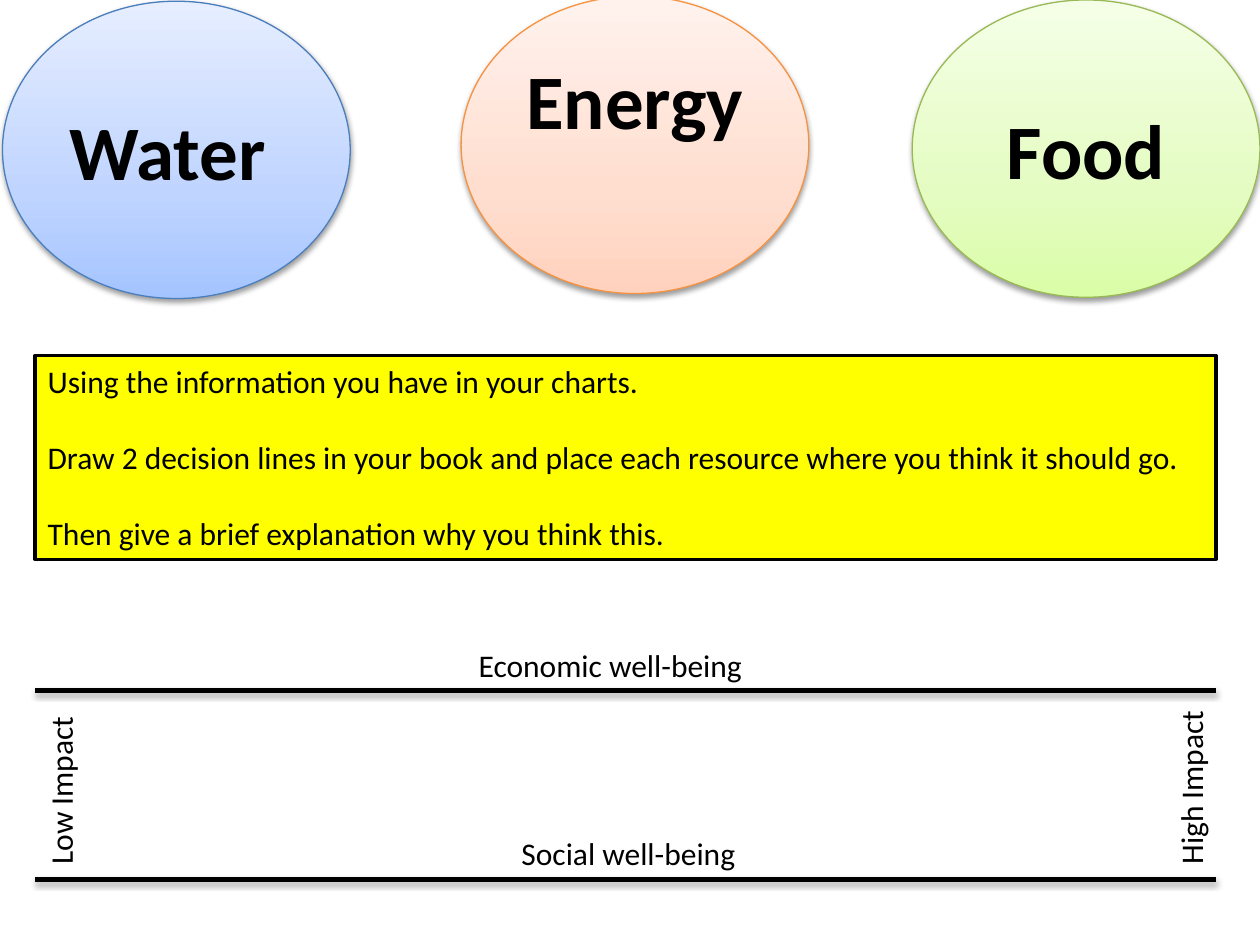
from copy import deepcopy

from lxml.etree import SubElement
from pptx import Presentation
from pptx.dml.color import RGBColor
from pptx.enum.shapes import MSO_CONNECTOR as Conn, MSO_SHAPE as Shape
from pptx.enum.text import MSO_ANCHOR as Anchor, PP_ALIGN as Align
from pptx.oxml.ns import qn
from pptx.util import Inches, Pt

BLACK = "000000"
LEFT, WIDE = 0.28, 9.37
OVALS = [
    ("Water ", 0.02, 0.01, ("A4C4FF", "BFD4FF", "E6EEFF"), "4B7EBC"),
    ("Energy  ", 3.66, -0.03, ("FFD2BD", "FFDED0", "FFF2ED"), "F69240"),
    ("Food", 7.24, 0, ("DAFDA7", "E4FCC2", "F5FFE7"), "98B955"),
]
TASK = [
    "Using the information you have in your charts.",
    "Draw 2 decision lines in your book and place each resource where you think it should go.",
    "Then give a brief explanation why you think this.",
]
LABELS = [
    ("Low Impact", -0.27, 6.01, 1.5, 270),
    ("High Impact", 8.7, 6.01, 1.5, 270),
    ("Economic well-being", 3.7, 5.08, 2.52, 0),
    ("Social well-being", 4.04, 6.57, 2.01, 0),
]


def rgb(code):
    return RGBColor.from_string(code)


def box(*sizes):
    return [Inches(size) for size in sizes]


def style(para, size, bold=False):
    for run in para.runs:
        font = run.font
        font.name, font.size, font.bold = "Calibri", Pt(size), bold
        font.color.rgb = rgb(BLACK)


def outline(shape, color, width):
    shape.line.color.rgb = rgb(color)
    shape.line.width = Pt(width)


def add_shadow(shape, dist, alpha):
    """Put a soft shadow straight below a shape whose line is already set."""
    props = shape._element.spPr
    effects = SubElement(props, qn("a:effectLst"))
    shadow = SubElement(effects, qn("a:outerShdw"), blurRad=str(Pt(3.1)),
                        dist=str(Pt(dist)), dir="5400000", rotWithShape="0")
    tone = SubElement(shadow, qn("a:srgbClr"), val=BLACK)
    SubElement(tone, qn("a:alpha"), val=str(alpha * 1000))


def fade(shape, colors):
    """Fill with three colors that run from bottom to top."""
    fill = shape.fill
    fill.gradient()
    fill.gradient_angle = 90
    stops = shape._element.spPr.find(".//" + qn("a:gsLst"))
    stops.append(deepcopy(stops[-1]))
    for stop, color, place in zip(fill.gradient_stops, colors, (0, 0.35, 1)):
        stop.color.rgb = rgb(color)
        stop.position = place


def add_oval(slide, text, left, top, colors, edge):
    oval = slide.shapes.add_shape(Shape.OVAL, *box(left, top, 2.76, 2.36))
    fade(oval, colors)
    outline(oval, edge, 0.75)
    add_shadow(oval, 1.6, 38)
    frame = oval.text_frame
    frame.text = text
    frame.word_wrap = True
    frame.vertical_anchor = Anchor.MIDDLE
    para = frame.paragraphs[0]
    para.alignment = Align.CENTER
    style(para, 44, True)


def add_task(slide):
    panel = slide.shapes.add_shape(Shape.RECTANGLE, *box(LEFT, 2.82, WIDE, 1.62))
    panel.shadow.inherit = False
    panel.fill.solid()
    panel.fill.fore_color.rgb = rgb("FFFF00")
    outline(panel, BLACK, 2)
    frame = panel.text_frame
    frame.text = "\n".join(TASK)
    frame.word_wrap = True
    frame.vertical_anchor = Anchor.TOP
    for i, para in enumerate(frame.paragraphs):
        para.alignment = Align.LEFT
        para.space_before = Pt(22 if i else 0)
        style(para, 18)


def add_scale(slide, top):
    ends = box(LEFT, top, LEFT + WIDE, top)
    scale = slide.shapes.add_connector(Conn.STRAIGHT, *ends)
    outline(scale, BLACK, 3)
    add_shadow(scale, 1.8, 35)


def add_label(slide, text, left, top, width, turn):
    label = slide.shapes.add_textbox(*box(left, top, width, 0.4))
    label.rotation = turn
    frame = label.text_frame
    frame.text = text
    frame.word_wrap = True
    style(frame.paragraphs[0], 18)


def main():
    deck = Presentation()
    deck.slide_width, deck.slide_height = box(10, 7.5)
    slide = deck.slides.add_slide(deck.slide_layouts[6])
    for oval in OVALS:
        add_oval(slide, *oval)
    add_task(slide)
    for top in (5.48, 6.98):
        add_scale(slide, top)
    for label in LABELS:
        add_label(slide, *label)
    deck.save("out.pptx")


if __name__ == "__main__":
    main()
